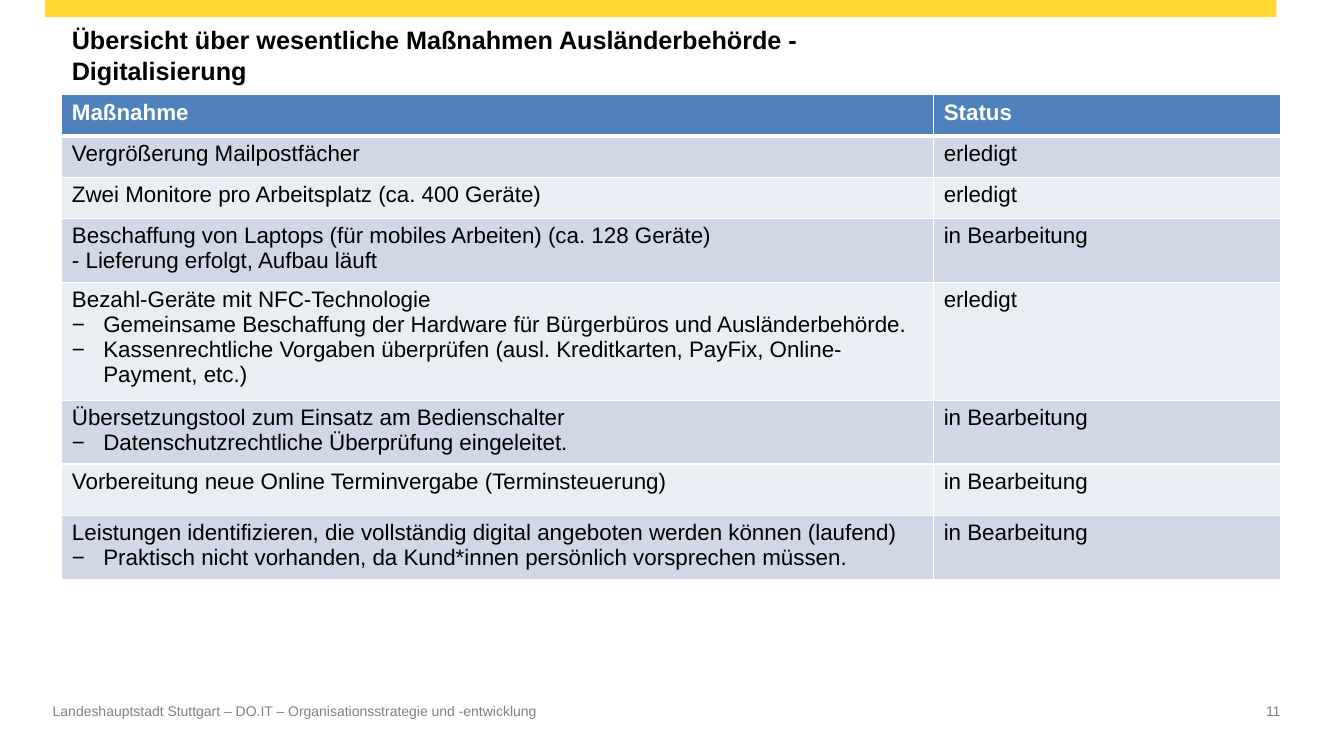
import pptx
import pptx.dml.color
import pptx.enum.shapes
import pptx.enum.text
import pptx.oxml
import pptx.oxml.ns
import pptx.util

Cm = pptx.util.Cm
Pt = pptx.util.Pt
ALIGN = pptx.enum.text.PP_ALIGN
ANCHOR = pptx.enum.text.MSO_ANCHOR

YELLOW, BLUE, WHITE, BLACK, GREY = "FFD833", "4F81BD", "FFFFFF", "000000", "818181"
BANDS = ("D0D8E8", "E9EDF4")
TITLE_FONT = {"name": "Arial", "size": Pt(18), "bold": True}
HEADER_FONT = {"name": "Arial", "size": Pt(16), "bold": True}
BODY_FONT = {"name": "Arial", "size": Pt(16), "bold": False}
FOOTER_FONT = {"name": "Arial", "size": Pt(10), "bold": False}
NO_MARGINS = dict.fromkeys(("margin_left", "margin_top", "margin_right", "margin_bottom"), 0)

DASH = "−"
COLUMN_WIDTHS = (21.97, 8.74)
ROW_HEIGHT = 1.04
TALL_ROWS = {6: 1.3}
MEASURES = [
    (["Maßnahme"], "Status"),
    (["Vergrößerung Mailpostfächer"], "erledigt"),
    (["Zwei Monitore pro Arbeitsplatz (ca. 400 Geräte)"], "erledigt"),
    (["Beschaffung von Laptops (für mobiles Arbeiten) (ca. 128 Geräte)",
      "- Lieferung erfolgt, Aufbau läuft"], "in Bearbeitung"),
    (["Bezahl-Geräte mit NFC-Technologie",
      DASH + "Gemeinsame Beschaffung der Hardware für Bürgerbüros und Ausländerbehörde.",
      DASH + "Kassenrechtliche Vorgaben überprüfen (ausl. Kreditkarten, PayFix, Online-Payment, etc.)"],
     "erledigt"),
    (["Übersetzungstool zum Einsatz am Bedienschalter",
      DASH + "Datenschutzrechtliche Überprüfung eingeleitet."], "in Bearbeitung"),
    (["Vorbereitung neue Online Terminvergabe (Terminsteuerung)"], "in Bearbeitung"),
    (["Leistungen identifizieren, die vollständig digital angeboten werden können (laufend)",
      DASH + "Praktisch nicht vorhanden, da Kund*innen persönlich vorsprechen müssen."],
     "in Bearbeitung"),
]


def rgb(value):
    """Turn a hex string into a colour."""
    return pptx.dml.color.RGBColor.from_string(value)


def apply(target, values):
    """Set every attribute listed in a dict of format values."""
    for name, value in values.items():
        setattr(target, name, value)


def element(tag, attributes, content=""):
    """Build one drawing element from its tag, attributes and inner XML."""
    namespace = pptx.oxml.ns.nsdecls("a")
    return pptx.oxml.parse_xml(f"<a:{tag} {namespace} {attributes}>{content}</a:{tag}>")


def add_dash(paragraph):
    """Give a paragraph a hanging dash bullet."""
    properties = paragraph._p.get_or_add_pPr()
    properties.set("marL", str(Cm(0.79)))
    properties.set("indent", str(-Cm(0.79)))
    properties.append(element("buFont", 'typeface="Arial"'))
    properties.append(element("buChar", f'char="{DASH}"'))


def write_lines(text_frame, lines, font, color, align=ALIGN.LEFT):
    """Write one paragraph per line, bulleting those that start with the dash."""
    for index, line in enumerate(lines):
        paragraph = text_frame.add_paragraph() if index else text_frame.paragraphs[0]
        paragraph.alignment = align
        if line.startswith(DASH):
            add_dash(paragraph)
        run = paragraph.add_run()
        run.text = line.removeprefix(DASH)
        apply(run.font, font)
        run.font.color.rgb = rgb(color)
        paragraph._p.append(element("endParaRPr", f'sz="{int(font["size"].pt * 100)}"'))


def add_text(slide, box, text, font, color, frame_format, align=ALIGN.LEFT):
    """Place a wrapping text box in the given box."""
    text_frame = slide.shapes.add_textbox(*map(Cm, box)).text_frame
    apply(text_frame, {"word_wrap": True, **frame_format})
    write_lines(text_frame, [text], font, color, align)


def add_top_bar(slide, box):
    """Draw the yellow bar at the top edge."""
    bar = slide.shapes.add_shape(pptx.enum.shapes.MSO_SHAPE.RECTANGLE, *map(Cm, box))
    bar.shadow.inherit = False
    bar.fill.solid()
    bar.fill.fore_color.rgb = rgb(YELLOW)
    bar.line.fill.background()


def add_borders(cell, bottom_width):
    """Draw white lines around a cell."""
    properties = cell._tc.get_or_add_tcPr()
    line_fill = f'<a:solidFill><a:srgbClr val="{WHITE}"/></a:solidFill>'
    for side, width in {"L": 1, "R": 1, "T": 1, "B": bottom_width}.items():
        properties.append(element(f"ln{side}", f'w="{Pt(width)}"', line_fill))


def add_measures_table(slide, left, top):
    """Place the table of measures with its top left corner at the given point."""
    heights = [TALL_ROWS.get(index, ROW_HEIGHT) for index in range(len(MEASURES))]
    table = slide.shapes.add_table(
        len(MEASURES), len(COLUMN_WIDTHS), Cm(left), Cm(top),
        Cm(sum(COLUMN_WIDTHS)), Cm(sum(heights))).table
    for column, width in zip(table.columns, COLUMN_WIDTHS):
        column.width = Cm(width)
    for index, (measure, status) in enumerate(MEASURES):
        table.rows[index].height = Cm(heights[index])
        is_header = index == 0
        for cell, lines in zip(table.rows[index].cells, (measure, [status])):
            add_borders(cell, 3 if is_header else 1)
            cell.fill.solid()
            cell.fill.fore_color.rgb = rgb(BLUE if is_header else BANDS[(index - 1) % 2])
            write_lines(cell.text_frame, lines, HEADER_FONT if is_header else BODY_FONT,
                        WHITE if is_header else BLACK)


def add_footer(slide, left, top, width, height):
    """Place the footer text at the left and the page number at the right."""
    number_width = 2.79
    add_text(slide, (left, top, 18.67, height),
             "Landeshauptstadt Stuttgart – DO.IT – Organisationsstrategie und -entwicklung",
             FOOTER_FONT, GREY, NO_MARGINS)
    add_text(slide, (left + width - number_width, top, number_width, height),
             "11", FOOTER_FONT, GREY, NO_MARGINS, ALIGN.RIGHT)


def main():
    """Build and save the slide."""
    presentation = pptx.Presentation()
    apply(presentation, {"slide_width": Cm(33.87), "slide_height": Cm(19.05)})
    slide = presentation.slides.add_slide(presentation.slide_layouts[6])
    add_top_bar(slide, (1.13, 0, 31.04, 0.43))
    add_text(slide, (1.56, 0.56, 20.7, 1.65),
             "Übersicht über wesentliche Maßnahmen Ausländerbehörde - Digitalisierung",
             TITLE_FONT, BLACK, {"vertical_anchor": ANCHOR.MIDDLE})
    add_measures_table(slide, 1.56, 2.39)
    add_footer(slide, 1.33, 17.7, 30.94, 0.99)
    presentation.save("out.pptx")


if __name__ == "__main__":
    main()
